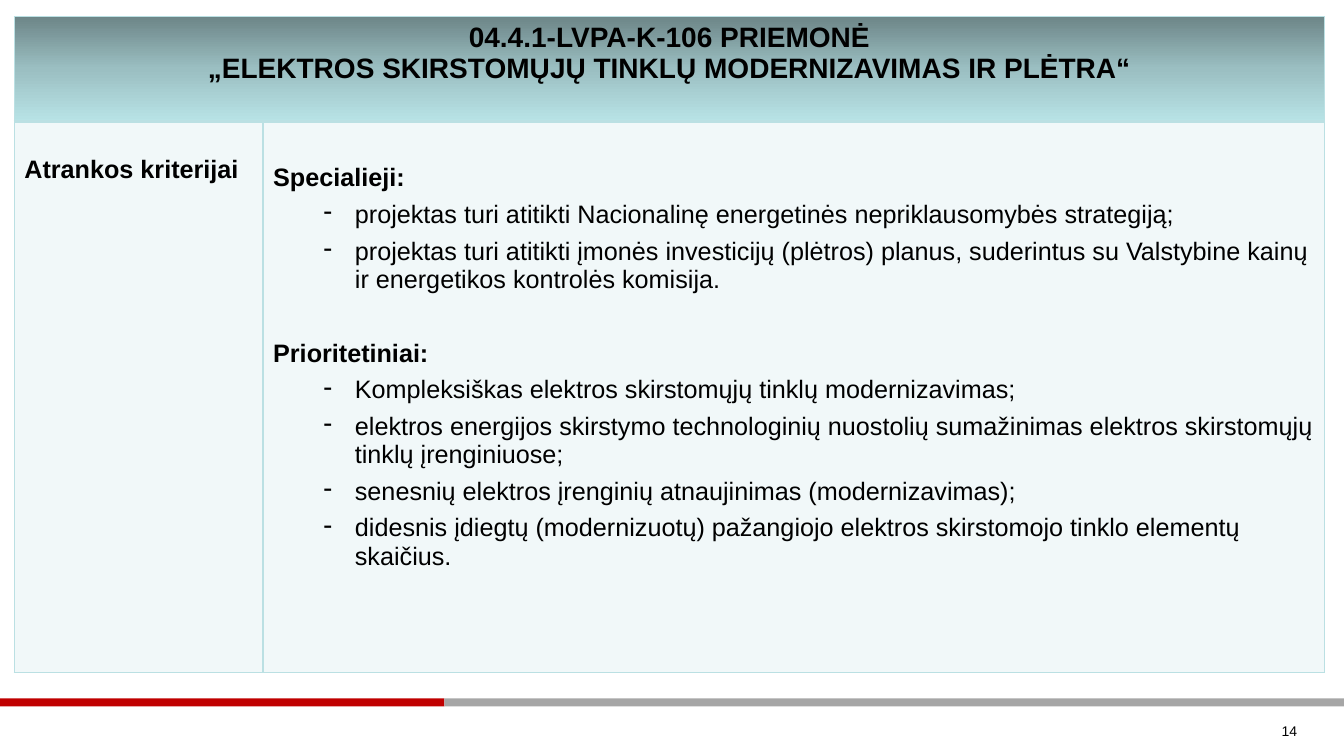
from lxml import etree
from pptx import Presentation
from pptx.dml.color import RGBColor
from pptx.enum import shapes, text
from pptx.oxml import ns
from pptx.util import Cm, Pt

HUES = {"red": "C00000", "grey": "A6A6A6", "black": "000000", "aqua": "BBE0E3",
        "dark": "6D8688", "mid": "9BBFC2", "light": "B8E3E6"}
TITLE = ["04.4.1-LVPA-K-106 PRIEMONĖ",
         "„ELEKTROS SKIRSTOMŲJŲ TINKLŲ MODERNIZAVIMAS IR PLĖTRA“"]
LABEL = "Atrankos kriterijai"
GROUPS = {
    "Specialieji:": [
        "projektas turi atitikti Nacionalinę energetinės nepriklausomybės strategiją;",
        "projektas turi atitikti įmonės investicijų (plėtros) planus, suderintus su "
        "Valstybine kainų ir energetikos kontrolės komisija."],
    "Prioritetiniai:": [
        "Kompleksiškas elektros skirstomųjų tinklų modernizavimas;",
        "elektros energijos skirstymo technologinių nuostolių sumažinimas elektros "
        "skirstomųjų tinklų įrenginiuose;",
        "senesnių elektros įrenginių atnaujinimas (modernizavimas);",
        "didesnis įdiegtų (modernizuotų) pažangiojo elektros skirstomojo tinklo "
        "elementų skaičius."],
}


def node(parent, tag, **attrs):
    """Append a drawing element to its parent and return it."""
    return etree.SubElement(parent, ns.qn("a:" + tag), attrs)


def style(para, size, bold=False):
    """Format every run of a paragraph."""
    for run in para.runs:
        font = run.font
        font.name, font.size, font.bold = "Arial", Pt(size), bold
        font.color.rgb = RGBColor.from_string(HUES["black"])


def paint(cell, head):
    """Give a cell its borders and its gradient or sheer fill."""
    props = cell._tc.get_or_add_tcPr()
    for side in "LRTB":
        wide = 2 if (head and side == "B") or (not head and side == "T") else 1
        line = node(props, "ln" + side, w=str(Pt(wide)))
        node(node(line, "solidFill"), "srgbClr", val=HUES["aqua"])
    if head:
        grad = node(props, "gradFill", rotWithShape="1")
        stops = node(grad, "gsLst")
        for place, hue in enumerate(("dark", "mid", "light")):
            stop = node(stops, "gs", pos=str(place * 50000))
            node(stop, "srgbClr", val=HUES[hue])
        node(grad, "lin", ang="5400000", scaled="0")
    else:
        tint = node(node(props, "solidFill"), "srgbClr", val=HUES["aqua"])
        node(tint, "alpha", val="20000")


def fill_list(frame):
    """Write the groups of criteria with their dashed items."""
    rows = [(line, line == name) for name, items in GROUPS.items()
            for line in [name, *items]]
    for index, (line, bold) in enumerate(rows):
        para = frame.add_paragraph() if index else frame.paragraphs[0]
        para.text = line
        if not bold:
            para.level = 1
            props = para._p.get_or_add_pPr()
            props.set("marL", str(Cm(2.06)))
            props.set("indent", str(Cm(-0.79)))
            node(props, "buChar", char="-")
        elif index:
            para.space_before = Pt(26.7)
        para.space_after = Pt(6)
        style(para, 18, bold)


def add_grid(slide, left, top, width, height):
    """Place the table of selection criteria in the given box."""
    grid = slide.shapes.add_table(2, 2, left, top, width, height).table
    grid.first_row = grid.horz_banding = False
    grid.columns[0].width = Cm(6.27)
    grid.columns[1].width = width - Cm(6.27)
    grid.rows[0].height = Cm(2.64)
    grid.rows[1].height = height - Cm(2.64)
    for row in range(2):
        for col in range(2):
            paint(grid.cell(row, col), row == 0)
    title, label, body = grid.cell(0, 0), grid.cell(1, 0), grid.cell(1, 1)
    title.merge(grid.cell(0, 1))
    title.text_frame.text = "\n".join(TITLE)
    for para in title.text_frame.paragraphs:
        para.alignment = text.PP_ALIGN.CENTER
        style(para, 20, True)
    label.margin_top = Cm(0.86)
    label.text_frame.text = LABEL
    style(label.text_frame.paragraphs[0], 18, True)
    body.margin_top = Cm(1.07)
    fill_list(body.text_frame)


def add_foot(slide, left, top, width, height):
    """Place the two-tone bar and the page number in the given box."""
    split = Cm(11.2)
    for start, span, hue in ((0, split, "red"), (split, width - split, "grey")):
        bar = slide.shapes.add_shape(shapes.MSO_SHAPE.RECTANGLE,
                                     left + start, top, span, Cm(0.2))
        bar.shadow.inherit = False
        bar.fill.solid()
        bar.fill.fore_color.rgb = RGBColor.from_string(HUES[hue])
        bar.line.fill.background()
    box = slide.shapes.add_textbox(left + width - Cm(8.83), top + Cm(0.2),
                                   Cm(7.9), height - Cm(0.2))
    frame = box.text_frame
    frame.word_wrap = True
    frame.vertical_anchor = text.MSO_ANCHOR.MIDDLE
    frame.text = "14"
    frame.paragraphs[0].alignment = text.PP_ALIGN.RIGHT
    style(frame.paragraphs[0], 10)


def main():
    """Build the slide and save it."""
    deck = Presentation()
    deck.slide_width, deck.slide_height = Cm(33.87), Cm(19.05)
    slide = deck.slides.add_slide(deck.slide_layouts[6])
    add_foot(slide, 0, Cm(17.6), deck.slide_width, Cm(1.45))
    add_grid(slide, Cm(0.36), Cm(0.42), Cm(33.02), Cm(16.53))
    deck.save("out.pptx")


if __name__ == "__main__":
    main()
